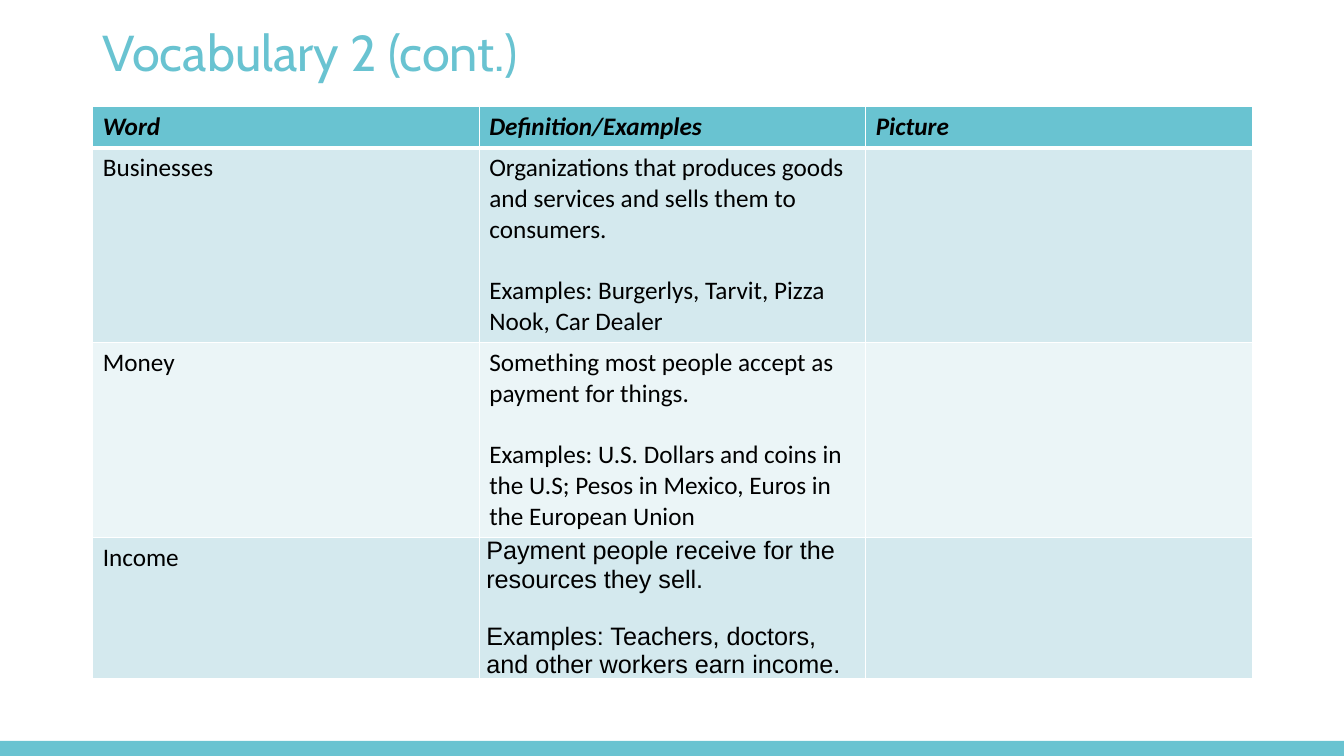
"""Build the vocabulary slide with its three-column word table."""
from dataclasses import dataclass

from lxml import etree
from pptx import Presentation
from pptx.dml.color import RGBColor
from pptx.enum import shapes, text
from pptx.oxml import ns
from pptx.util import Inches, Pt

TITLE = "Vocabulary 2 (cont.)"
HEADINGS = ["Word", "Definition/Examples", "Picture"]
ENTRIES = [
    ("Businesses", [
        "Organizations that produces goods and services and sells them to consumers.",
        "Examples: Burgerlys, Tarvit, Pizza Nook, Car Dealer"]),
    ("Money", [
        "Something most people accept as payment for things.",
        "Examples: U.S. Dollars and coins in the U.S; Pesos in Mexico, "
        "Euros in the European Union"]),
    ("Income", [
        "Payment people receive for the resources they sell.",
        "Examples: Teachers, doctors, and other workers earn income."]),
]
ROW_HEIGHTS = [0.4, 1.93, 1.93, 1.4]
LEFT, WIDTH, TABLE_TOP = 0.92, 11.5, 1.06
SLIDE_WIDTH, SLIDE_HEIGHT, BAR_HEIGHT = 13.33, 7.5, 0.15


@dataclass(frozen=True)
class Theme:
    accent: str = "69C3D1"
    bands: tuple = ("D4E9EE", "EBF5F7")
    ink: str = "000000"
    border: str = "FFFFFF"
    title_font: str = "Cabin"
    body_font: str = "Calibri"
    plain_font: str = "Arial"
    title_size: float = 36
    body_size: float = 18
    example_gap: float = 22
    plain_gap: float = 20.5


THEME = Theme()


def set_font(font, name, size, color):
    font.name, font.size = name, Pt(size)
    font.color.rgb = RGBColor.from_string(color)


def set_borders(cell, top, bottom):
    properties = cell._tc.get_or_add_tcPr()
    for side, points in (("L", 1), ("R", 1), ("T", top), ("B", bottom)):
        line = etree.SubElement(properties, ns.qn(f"a:ln{side}"), w=str(Pt(points)))
        fill = etree.SubElement(line, ns.qn("a:solidFill"))
        etree.SubElement(fill, ns.qn("a:srgbClr"), val=THEME.border)


def fill_cell(cell, lines, color, font_name, gap, heading):
    cell.fill.solid()
    cell.fill.fore_color.rgb = RGBColor.from_string(color)
    cell.text = "\n".join(lines)
    for index, para in enumerate(cell.text_frame.paragraphs):
        set_font(para.font, font_name, THEME.body_size, THEME.ink)
        para.font.bold = para.font.italic = heading
        if index:
            para.space_before = Pt(gap)


def add_title(page):
    title = page.shapes.title
    title.left, title.top = Inches(LEFT), Inches(0.22)
    title.width, title.height = Inches(WIDTH), Inches(0.66)
    title.text_frame.text = TITLE
    title.text_frame.vertical_anchor = text.MSO_ANCHOR.MIDDLE
    para = title.text_frame.paragraphs[0]
    para.alignment = text.PP_ALIGN.LEFT
    para.line_spacing = 0.9
    set_font(para.font, THEME.title_font, THEME.title_size, THEME.accent)


def add_bar(page):
    bar = page.shapes.add_shape(
        shapes.MSO_SHAPE.RECTANGLE, 0, Inches(SLIDE_HEIGHT - BAR_HEIGHT),
        Inches(SLIDE_WIDTH), Inches(BAR_HEIGHT))
    bar.shadow.inherit = False
    bar.fill.solid()
    bar.fill.fore_color.rgb = RGBColor.from_string(THEME.accent)
    bar.line.fill.background()


def add_vocabulary(page):
    rows = [[[heading] for heading in HEADINGS]]
    rows += [[[word], meaning, []] for word, meaning in ENTRIES]
    table = page.shapes.add_table(
        len(rows), len(HEADINGS), Inches(LEFT), Inches(TABLE_TOP),
        Inches(WIDTH), Inches(sum(ROW_HEIGHTS))).table
    for column in table.columns:
        column.width = Inches(WIDTH / len(HEADINGS))
    for number, row in enumerate(rows):
        table.rows[number].height = Inches(ROW_HEIGHTS[number])
        heading = number == 0
        color = THEME.accent if heading else THEME.bands[(number - 1) % 2]
        for place, lines in enumerate(row):
            cell = table.cell(number, place)
            plain = number == len(rows) - 1 and place == 1
            set_borders(cell, 3 if number == 1 else 1, 3 if heading else 1)
            font_name = THEME.plain_font if plain else THEME.body_font
            gap = THEME.plain_gap if plain else THEME.example_gap
            fill_cell(cell, lines, color, font_name, gap, heading)
            if plain:
                cell.margin_left = cell.margin_right = Inches(0.07)
                cell.margin_top = cell.margin_bottom = 0


def main():
    deck = Presentation()
    deck.slide_width, deck.slide_height = Inches(SLIDE_WIDTH), Inches(SLIDE_HEIGHT)
    page = deck.slides.add_slide(deck.slide_layouts[5])
    add_bar(page)
    add_title(page)
    add_vocabulary(page)
    deck.save("out.pptx")


if __name__ == "__main__":
    main()
